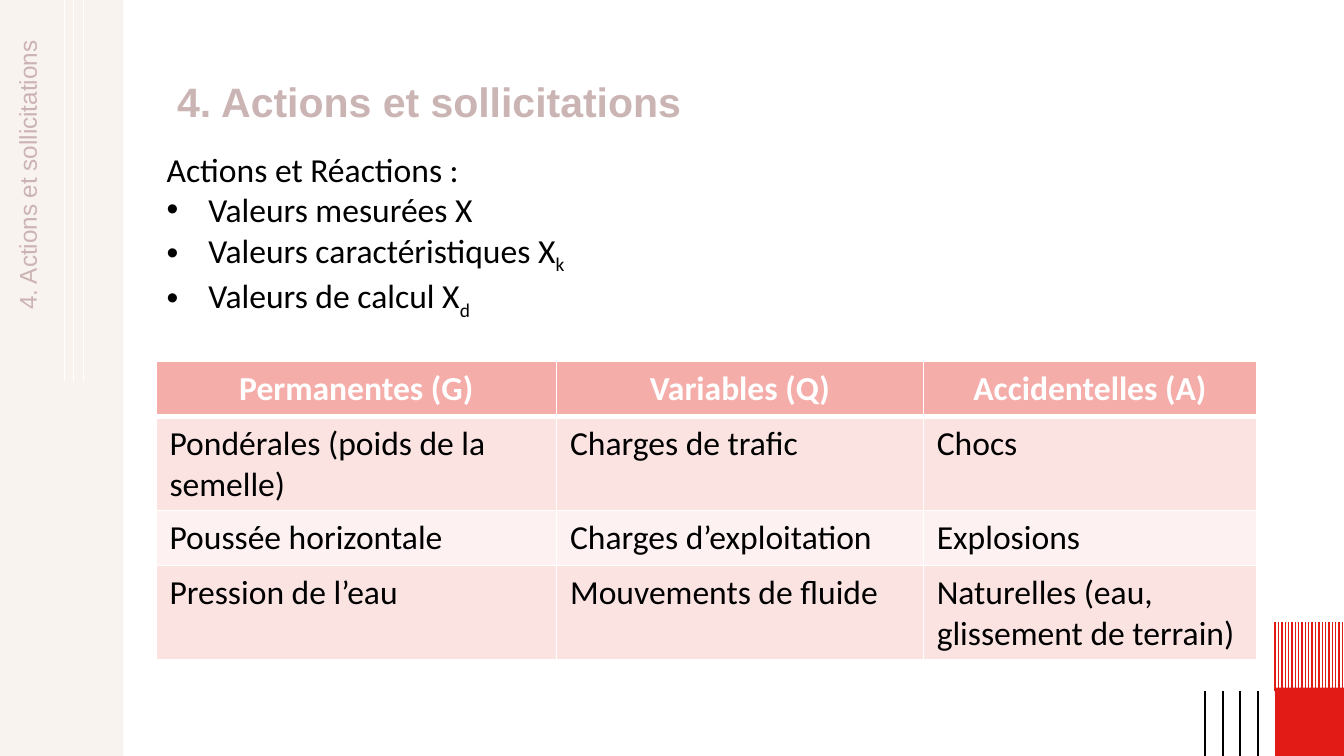
from lxml import etree
from pptx import Presentation
from pptx import util as u
from pptx.dml.color import RGBColor
from pptx.enum import shapes, text
from pptx.oxml import ns

TITLE = "4. Actions et sollicitations"
BULLETS = [("Valeurs mesurées X", ""), ("Valeurs caractéristiques X", "k"), ("Valeurs de calcul X", "d")]
HEADER = ["Permanentes (G)", "Variables (Q)", "Accidentelles (A)"]
ROWS = [
    ["Pondérales (poids de la semelle)", "Charges de trafic", "Chocs"],
    ["Poussée horizontale", "Charges d’exploitation", "Explosions"],
    ["Pression de l’eau", "Mouvements de fluide", "Naturelles (eau, glissement de terrain)"],
]
COLUMNS = [7.57, 6.93, 6.3]
BODY = {"name": "Calibri", "size": u.Pt(18)}


def rgb(value):
    return RGBColor.from_string(value)


def cm(*values):
    return [u.Cm(v) for v in values]


def sub(parent, tag, **attrs):
    return etree.SubElement(parent, ns.qn(tag), attrs)


def set_format(target, values):
    for name, value in values.items():
        setattr(target, name, value)


def add_run(p, content, color, font):
    r = p.add_run()
    r.text = content
    set_format(r.font, font)
    r.font.color.rgb = rgb(color)
    return r


def add_rect(s, box, color):
    sp = s.shapes.add_shape(shapes.MSO_SHAPE.RECTANGLE, *cm(*box))
    sp.shadow.inherit = False
    sp.fill.solid()
    sp.fill.fore_color.rgb = rgb(color)
    sp.line.fill.background()
    return sp


def add_rules(s, box, count, color, width):
    x, y, w, h = box
    for i in range(count):
        at = x + w * i / (count - 1)
        line = s.shapes.add_connector(shapes.MSO_CONNECTOR.STRAIGHT, *cm(at, y, at, y + h))
        line.line.color.rgb = rgb(color)
        line.line.width = u.Pt(width)
        sub(line._element.spPr, "a:effectLst")


def add_text(s, box, **frame):
    sp = s.shapes.add_textbox(*cm(*box))
    set_format(sp.text_frame, {"word_wrap": True, **frame})
    return sp


def add_hatching(s, box, count):
    x, y, w, h = box
    builder = s.shapes.build_freeform(*cm(x, y + h))
    for i in range(count):
        at = x + w * i / (count - 1)
        builder.move_to(*cm(at, y + h))
        builder.add_line_segments([cm(at, y)], close=False)
    sp = builder.convert_to_shape()
    sp.shadow.inherit = False
    sp.fill.background()
    sp.line.color.rgb = rgb("E31B17")
    sp.line.width = u.Pt(0.75)


def add_corner(s, box):
    x, y, w, h = box
    add_hatching(s, (x + 1.32, y, 1.27, 1.3), 21)
    add_rect(s, (x + 1.32, y + 1.24, w - 1.32, h - 1.24), "E31B17")
    add_rules(s, (x, y + 1.3, 0.99, h - 1.3), 4, "000000", 1)


def add_sidebar(s, box):
    x, y, w, h = box
    band = add_rect(s, box, "F8F0EC")
    sub(band.fill._xPr.find(".//" + ns.qn("a:srgbClr")), "a:alpha", val="75000")
    add_rules(s, (x + 1.22, y, 0.35, 7.21), 3, "FFFFFF", 0.5)
    length, depth = 11.2, 0.86
    label = add_text(s, (x + 0.55 - length / 2, y + 6.12 - depth / 2, length, depth),
                     vertical_anchor=text.MSO_ANCHOR.MIDDLE)
    label.rotation = 270
    p = label.text_frame.paragraphs[0]
    set_format(p, {"alignment": text.PP_ALIGN.RIGHT, "line_spacing": 0.9})
    add_run(p, TITLE, "CBB3B3", {"name": "Arial", "size": u.Pt(13)})


def add_title(s, box):
    tf = add_text(s, box, vertical_anchor=text.MSO_ANCHOR.MIDDLE).text_frame
    p = tf.paragraphs[0]
    p.line_spacing = 0.9
    add_run(p, TITLE, "CBB4B4", {"name": "Arial", "size": u.Pt(22), "bold": True})


def add_bullets(s, box):
    tf = add_text(s, box, word_wrap=False, auto_size=text.MSO_AUTO_SIZE.SHAPE_TO_FIT_TEXT).text_frame
    add_run(tf.paragraphs[0], "Actions et Réactions :", "000000", BODY)
    for content, index in BULLETS:
        p = tf.add_paragraph()
        pPr = p._p.get_or_add_pPr()
        indent = u.Cm(0.79)
        pPr.set("marL", str(indent))
        pPr.set("indent", str(-indent))
        sub(pPr, "a:buFont", typeface="Arial")
        sub(pPr, "a:buChar", char="•")
        add_run(p, content, "000000", BODY)
        if index:
            r = add_run(p, index, "000000", BODY)
            r.font._element.set("baseline", "-25000")


def add_borders(cell, bottom):
    tcPr = cell._tc.get_or_add_tcPr()
    for i, side in enumerate("LRTB"):
        width = u.Pt(bottom if side == "B" else 1)
        ln = sub(tcPr, f"a:ln{side}", w=str(width))
        sub(sub(ln, "a:solidFill"), "a:srgbClr", val="FFFFFF")
        tcPr.insert(i, ln)


def add_actions_table(s, box):
    rows = [HEADER] + ROWS
    table = s.shapes.add_table(len(rows), len(HEADER), *cm(*box)).table
    for column, width in zip(table.columns, COLUMNS):
        column.width = u.Cm(width)
    for i, row in enumerate(rows):
        head = i == 0
        fill = "F5ADAA" if head else ("FDF1F1", "FBE3E2")[i % 2]
        for j, content in enumerate(row):
            cell = table.cell(i, j)
            cell.fill.solid()
            cell.fill.fore_color.rgb = rgb(fill)
            add_borders(cell, 3 if head else 1)
            if i == 1:
                top = cell._tc.tcPr.find(ns.qn("a:lnT"))
                top.set("w", str(u.Pt(3)))
            p = cell.text_frame.paragraphs[0]
            p.alignment = text.PP_ALIGN.CENTER if head else text.PP_ALIGN.LEFT
            add_run(p, content, "FFFFFF" if head else "000000", {**BODY, "bold": head})


def main():
    prs = Presentation()
    set_format(prs, {"slide_width": u.Cm(25.4), "slide_height": u.Cm(14.29)})
    s = prs.slides.add_slide(prs.slide_layouts[6])
    add_corner(s, (22.78, 11.76, 2.62, 2.53))
    add_sidebar(s, (0, 0, 2.33, 14.29))
    add_title(s, (3.1, 1.24, 21, 1.45))
    add_bullets(s, (2.9, 2.69, 8.15, 3.33))
    add_actions_table(s, (2.95, 6.83, sum(COLUMNS), 4.16))
    prs.save("out.pptx")


if __name__ == "__main__":
    main()
